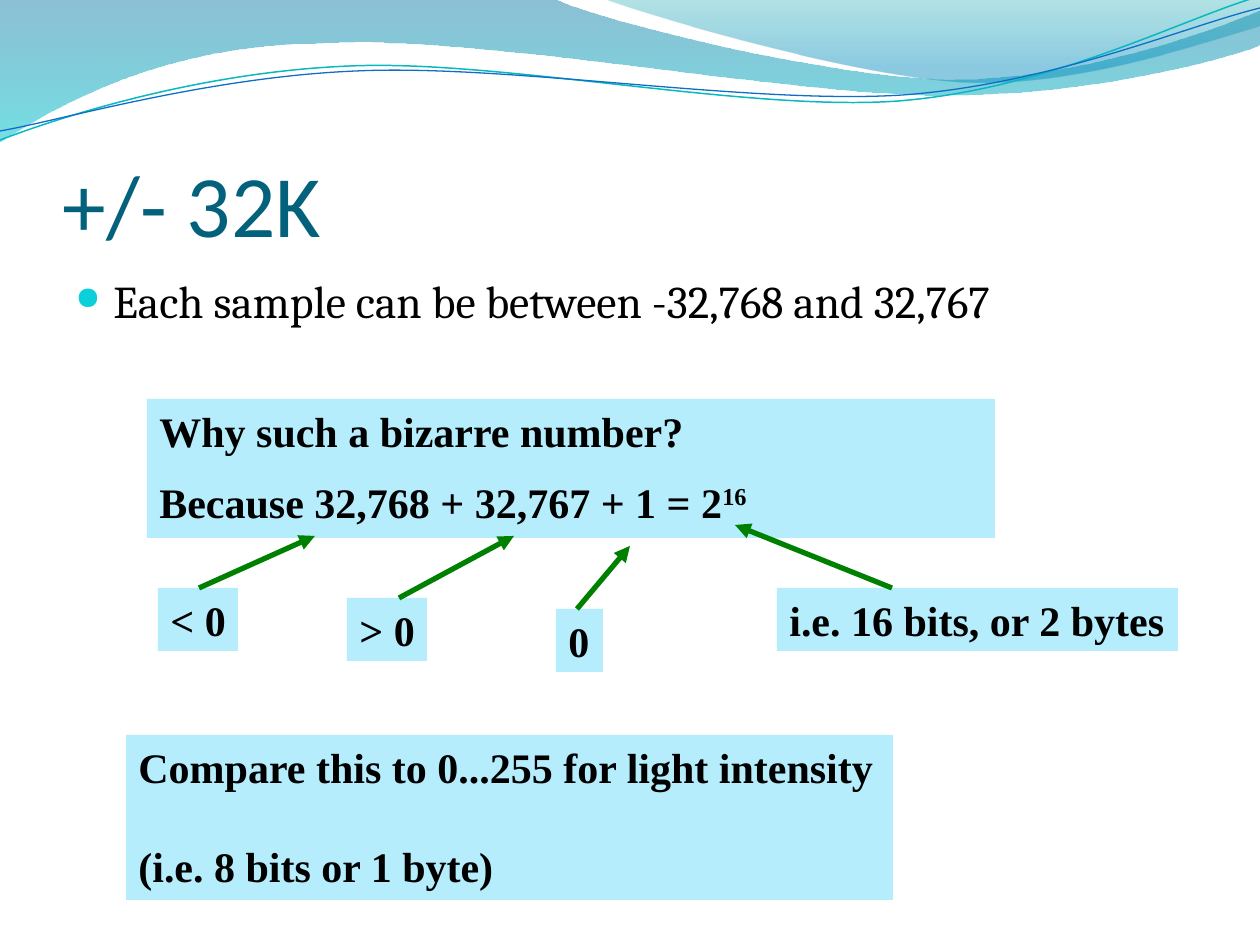
"""Build a slide that explains the range of 16-bit sound samples."""
from lxml.etree import SubElement
from pptx import Presentation
from pptx.dml.color import RGBColor
from pptx.enum.shapes import MSO_CONNECTOR
from pptx.enum.text import MSO_ANCHOR
from pptx.oxml.ns import qn
from pptx.util import Emu, Pt

PX = 914400 // 126
WIDTH, HEIGHT = 1260, 945

BLACK = RGBColor(0x00, 0x00, 0x00)
TITLE_BLUE = RGBColor(0x04, 0x61, 0x7B)
PALE_BLUE = RGBColor(0xB5, 0xED, 0xFD)
ARROW_GREEN = RGBColor(0x00, 0x80, 0x00)
WAVE_BLUE = RGBColor(0x00, 0x74, 0xA1)
WAVE_CYAN = RGBColor(0x00, 0xC6, 0xCF)
CREST_TEAL = RGBColor(0x00, 0xA1, 0xA9)
CREST_BLUE = RGBColor(0x00, 0x8B, 0xBF)
LINE_TEAL = RGBColor(0x0A, 0xB8, 0xBF)
LINE_BLUE = RGBColor(0x0F, 0x6F, 0xC6)
BULLET_CYAN = RGBColor(0x0B, 0xD0, 0xD9)

TITLE = "+/- 32K"
BODY = "Each sample can be between -32,768 and 32,767"

BANDS = [
    ([(0, -1), (554, -1), (600, 21, 837, 79, 955, 79),
      (1075, 79, 1207, 33, 1260, 11), (1261, 45),
      (1239, 55, 1096, 96, 940, 95), (784, 95, 481, 35, 324, 43),
      (163, 44, 58, 105, -1, 142), (0, -1)],
     [(0, WAVE_BLUE, 45), (1, WAVE_CYAN, 55)]),
    ([(604, -1), (641, 14, 859, 78, 969, 82),
      (1079, 86, 1211, 40, 1260, 26), (1260, 0), (604, -1)],
     [(0, CREST_TEAL, 30), (0.8, CREST_BLUE, 45)]),
]
STRANDS = [
    ([(0, 140), (60, 117, 199, 72, 349, 66), (498, 59, 747, 112, 898, 101),
      (1050, 89, 1182, 19, 1257, -3)], LINE_TEAL, 0.85),
    ([(0, 131), (59, 121, 207, 77, 357, 71), (508, 64, 752, 105, 903, 95),
      (1053, 84, 1186, 26, 1260, 8)], LINE_BLUE, 0.75),
]

NOTES = [
    ((126, 735, 767, 165), 28,
     [("Compare this to 0...255 for light intensity", ""), ("(i.e. 8 bits or 1 byte)", "")]),
    ((147, 399, 848, 139), 12,
     [("Why such a bizarre number?", ""), ("Because 32,768 + 32,767 + 1 = 2", "16")]),
    ((777, 588, 401, 63), 0, [("i.e. 16 bits, or 2 bytes", "")]),
    ((158, 588, 80, 63), 0, [("< 0", "")]),
    ((347, 598, 80, 63), 0, [("> 0", "")]),
    ((556, 609, 47, 63), 0, [("0", "")]),
]
ARROWS = [
    (892, 588, 735, 525),
    (577, 609, 630, 546),
    (399, 598, 514, 536),
    (199, 588, 315, 536),
]


def px(*lengths):
    return [Emu(length * PX) for length in lengths]


def add_curve(page, segments, close):
    builder = page.shapes.build_freeform(*px(*segments[0]), scale=1.0)
    builder.add_line_segments([px(*segment[-2:]) for segment in segments[1:]], close=close)
    curve = builder.convert_to_shape()
    curve.shadow.inherit = False
    steps = list(curve._element.spPr.iter(qn("a:lnTo")))
    for step, segment in zip(steps, segments[1:]):
        if len(segment) == 6:
            step.tag = qn("a:cubicBezTo")
            for index in (0, 1):
                x, y = px(*segment[2 * index:2 * index + 2])
                control = SubElement(step, qn("a:pt"))
                control.set("x", str(x - curve.left))
                control.set("y", str(y - curve.top))
                step.insert(index, control)
    return curve


def add_band(page, segments, stops):
    band = add_curve(page, segments, True)
    band.line.fill.background()
    band.fill.gradient()
    band.fill.gradient_angle = 270
    for stop, (position, color, _) in zip(band.fill.gradient_stops, stops):
        stop.position = position
        stop.color.rgb = color
    for node, (_, _, opacity) in zip(band._element.spPr.iter(qn("a:srgbClr")), stops):
        SubElement(node, qn("a:alpha")).set("val", str(opacity * 1000))


def add_strand(page, segments, color, weight):
    strand = add_curve(page, segments, False)
    strand.fill.background()
    strand.line.color.rgb = color
    strand.line.width = Pt(weight)


def add_box(page, frame):
    box = page.shapes.add_textbox(*px(*frame))
    box.text_frame.word_wrap = True
    return box


def style(para, name, size, color, bold=False):
    font = para.font
    font.name, font.size, font.bold = name, Pt(size), bold
    font.color.rgb = color


def add_title(page):
    text = add_box(page, (63, 97, 1134, 158)).text_frame
    text.margin_left = text.margin_right = text.margin_bottom = 0
    text.vertical_anchor = MSO_ANCHOR.BOTTOM
    text.text = TITLE
    style(text.paragraphs[0], "Calibri", 50, TITLE_BLUE)


def add_body(page):
    text = add_box(page, (63, 267, 1134, 605)).text_frame
    text.text = BODY
    para = text.paragraphs[0]
    para.space_before = Pt(5)
    style(para, "Cambria", 26, BLACK)
    props = para._p.get_or_add_pPr()
    indent = px(38)[0]
    props.set("marL", str(indent))
    props.set("indent", str(-indent))
    color, size, symbol = [SubElement(props, qn(tag)) for tag in ("a:buClr", "a:buSzPct", "a:buChar")]
    SubElement(color, qn("a:srgbClr")).set("val", str(BULLET_CYAN))
    size.set("val", "70000")
    symbol.set("char", "●")
    props.append(props.find(qn("a:defRPr")))


def add_note(page, frame, gap, lines):
    box = add_box(page, frame)
    box.fill.solid()
    box.fill.fore_color.rgb = PALE_BLUE
    text = box.text_frame
    text.margin_right = 0
    for index, (words, power) in enumerate(lines):
        para = text.add_paragraph() if index else text.paragraphs[0]
        if index:
            para.space_before = Pt(gap)
        style(para, "Times New Roman", 24, BLACK, True)
        para.add_run().text = words
        if power:
            span = para.add_run()
            span.text = power
            span._r.get_or_add_rPr().set("baseline", "30000")


def add_arrow(page, ends):
    arrow = page.shapes.add_connector(MSO_CONNECTOR.STRAIGHT, *px(*ends))
    arrow.line.color.rgb = ARROW_GREEN
    arrow.line.width = Pt(3)
    SubElement(arrow.line._get_or_add_ln(), qn("a:tailEnd")).set("type", "triangle")
    SubElement(arrow._element.spPr, qn("a:effectLst"))


def main():
    deck = Presentation()
    deck.slide_width, deck.slide_height = px(WIDTH, HEIGHT)
    page = deck.slides.add_slide(deck.slide_layouts[6])
    for band in BANDS:
        add_band(page, *band)
    for strand in STRANDS:
        add_strand(page, *strand)
    add_title(page)
    add_body(page)
    for note in NOTES:
        add_note(page, *note)
    for ends in ARROWS:
        add_arrow(page, ends)
    deck.save("out.pptx")


if __name__ == "__main__":
    main()
